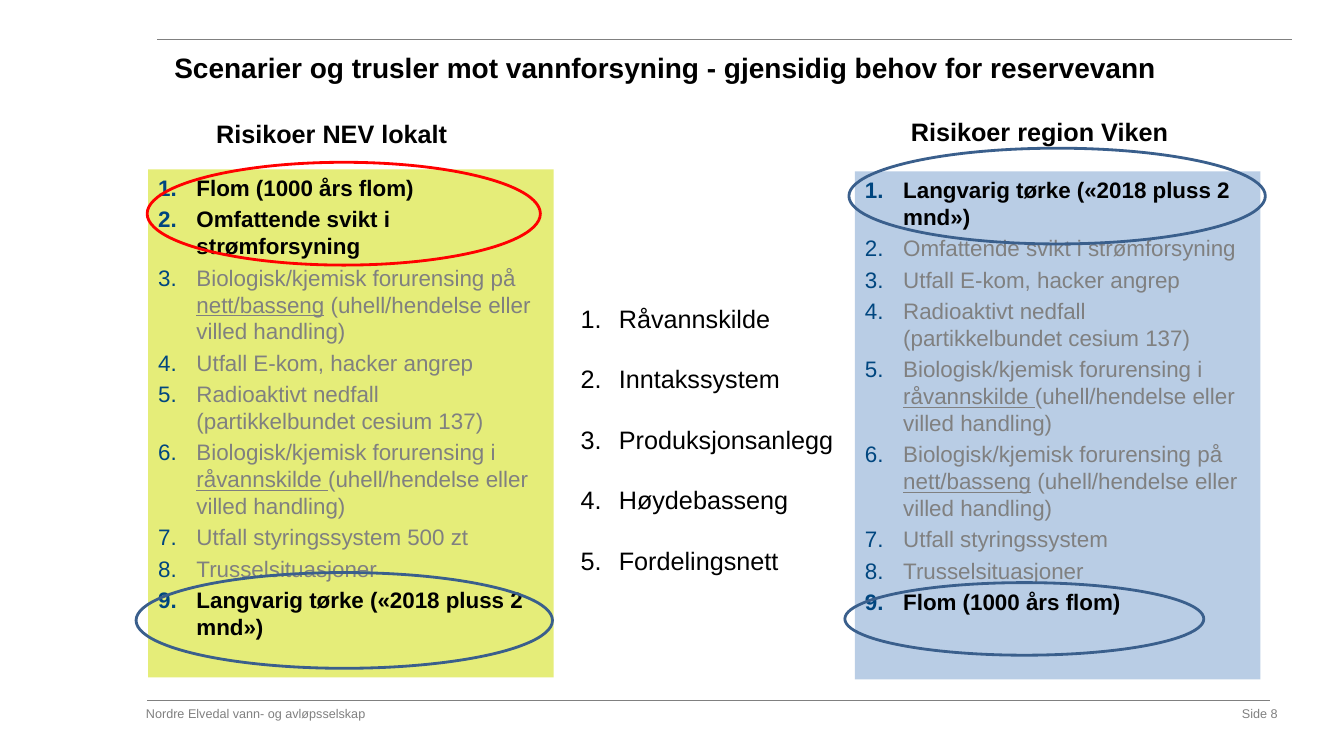
from lxml import etree
from pptx import Presentation, util as u
from pptx.dml.color import RGBColor
from pptx.enum import shapes, text
from pptx.oxml.ns import qn


class Theme:
    font = "Arial"
    black, gray, num = "000000", "808080", "00467F"
    lime, sky, blue, red = "E5ED79", "B9CDE5", "3A5F8C", "FF0000"
    title, head, item, foot = 20, 18, 16, 9
    left, right = text.PP_ALIGN.LEFT, text.PP_ALIGN.RIGHT
    center = text.PP_ALIGN.CENTER


class Deck:
    def __init__(self, theme):
        self.theme = theme
        self.prs = Presentation()
        self.prs.slide_width = u.Inches(13.33)
        self.prs.slide_height = u.Inches(7.5)
        self.slide = self.prs.slides.add_slide(self.prs.slide_layouts[6])

    def style(self, font, size, color, bold=False):
        font.name, font.size, font.bold = self.theme.font, u.Pt(size), bold
        font.color.rgb = RGBColor.from_string(color)

    def rule(self, x, y, end):
        line = self.slide.shapes.add_connector(
            shapes.MSO_CONNECTOR.STRAIGHT, *map(u.Inches, (x, y, end, y)))
        line.line.color.rgb = RGBColor.from_string(self.theme.gray)
        line.line.width = u.Pt(0.75)
        etree.SubElement(line._element.spPr, qn("a:effectLst"))

    def shape(self, kind, box, fill=None, edge=None):
        item = self.slide.shapes.add_shape(kind, *map(u.Inches, box))
        item.shadow.inherit = False
        if fill:
            item.fill.solid()
            item.fill.fore_color.rgb = RGBColor.from_string(fill)
        else:
            item.fill.background()
        if edge:
            item.line.color.rgb = RGBColor.from_string(edge)
            item.line.width = u.Pt(2)
        else:
            item.line.fill.background()
        return item

    def ring(self, box, color):
        self.shape(shapes.MSO_SHAPE.OVAL, box, edge=color)

    def label(self, box, words, size, color, bold=False, align=Theme.left):
        frame = self.slide.shapes.add_textbox(*map(u.Inches, box)).text_frame
        frame.word_wrap = True
        para = frame.paragraphs[0]
        para.alignment = align
        para.text = words
        self.style(para.font, size, color, bold)

    def number(self, para, color):
        props = para._p.get_or_add_pPr()
        props.set("marL", str(u.Inches(0.38)))
        props.set("indent", str(-u.Inches(0.38)))
        tint = etree.SubElement(props, qn("a:buClr"))
        etree.SubElement(tint, qn("a:srgbClr"), val=color)
        etree.SubElement(props, qn("a:buFont"), typeface="+mj-lt")
        etree.SubElement(props, qn("a:buAutoNum"), type="arabicPeriod")

    def fill_list(self, frame, items, size, gap, num, ink, strong=()):
        """Number the items; odd parts of a tuple are underlined."""
        frame.word_wrap = True
        frame.vertical_anchor = text.MSO_ANCHOR.TOP
        for i, parts in enumerate(items):
            para = frame.paragraphs[0] if i == 0 else frame.add_paragraph()
            para.alignment = self.theme.left
            if i:
                para.space_before = u.Pt(gap)
            self.number(para, num)
            bold = i in strong
            self.style(para.font, size, self.theme.black if bold else ink, bold)
            for j, part in enumerate((parts,) if isinstance(parts, str) else parts):
                run = para.add_run()
                run.text = part
                if j % 2:
                    run.font.underline = True

    def panel(self, box, fill, items, strong):
        frame = self.shape(shapes.MSO_SHAPE.RECTANGLE, box, fill).text_frame
        self.fill_list(frame, items, self.theme.item, 3.2,
                       self.theme.num, self.theme.gray, strong)

    def steps(self, box, items):
        frame = self.slide.shapes.add_textbox(*map(u.Inches, box)).text_frame
        self.fill_list(frame, items, self.theme.head, 21.6,
                       self.theme.black, self.theme.black)


def main():
    t = Theme
    deck = Deck(t)

    # Rules and title
    deck.rule(1.46, 6.95, 12.6)
    deck.rule(1.56, 0.39, 12.81)
    deck.label((1.63, 0.45, 11.15, 0.55),
               "Scenarier og trusler mot vannforsyning - gjensidig behov for reservevann",
               t.title, t.black, True)

    # Risks shared by both panels
    flood = "Flom (1000 års flom)"
    drought = "Langvarig tørke («2018 pluss 2 mnd»)"
    power = "Omfattende svikt i strømforsyning"
    hack = "Utfall E-kom, hacker angrep"
    fallout = "Radioaktivt nedfall (partikkelbundet cesium 137)"
    act = "(uhell/hendelse eller villed handling)"
    net = ("Biologisk/kjemisk forurensing på ", "nett/basseng", " " + act)
    raw = ("Biologisk/kjemisk forurensing i ", "råvannskilde ", act)
    threat = "Trusselsituasjoner"

    # Panels and the list between them
    deck.panel((1.47, 1.68, 4.02, 5.04), t.lime,
               [flood, power, net, hack, fallout, raw,
                "Utfall styringssystem 500 zt", threat, drought], (0, 1, 8))
    deck.steps((5.66, 2.96, 3.07, 2.83),
               ["Råvannskilde", "Inntakssystem", "Produksjonsanlegg",
                "Høydebasseng", "Fordelingsnett"])
    deck.panel((8.48, 1.7, 4.02, 5.04), t.sky,
               [drought, power, hack, fallout, raw, net,
                "Utfall styringssystem", threat, flood], (0, 8))

    # Panel headings
    for x, y, words in ((1.28, 1.12, "Risikoer NEV lokalt"),
                        (8.3, 1.11, "Risikoer region Viken")):
        deck.label((x, y, 4.02, 0.4), words, t.head, t.black, True, t.center)

    # Rings around the main risks
    deck.ring((1.35, 5.68, 4.13, 0.95), t.blue)
    deck.ring((8.42, 1.47, 4.13, 0.95), t.blue)
    deck.ring((1.46, 1.61, 3.9, 1.02), t.red)
    deck.ring((8.38, 5.78, 3.56, 0.72), t.blue)

    # Footer
    deck.label((1.35, 6.95, 8.44, 0.4), "Nordre Elvedal vann- og avløpsselskap",
               t.foot, t.gray)
    deck.label((10.31, 6.95, 2.46, 0.4), "Side 8", t.foot, t.gray, align=t.right)

    deck.prs.save("out.pptx")


if __name__ == "__main__":
    main()
